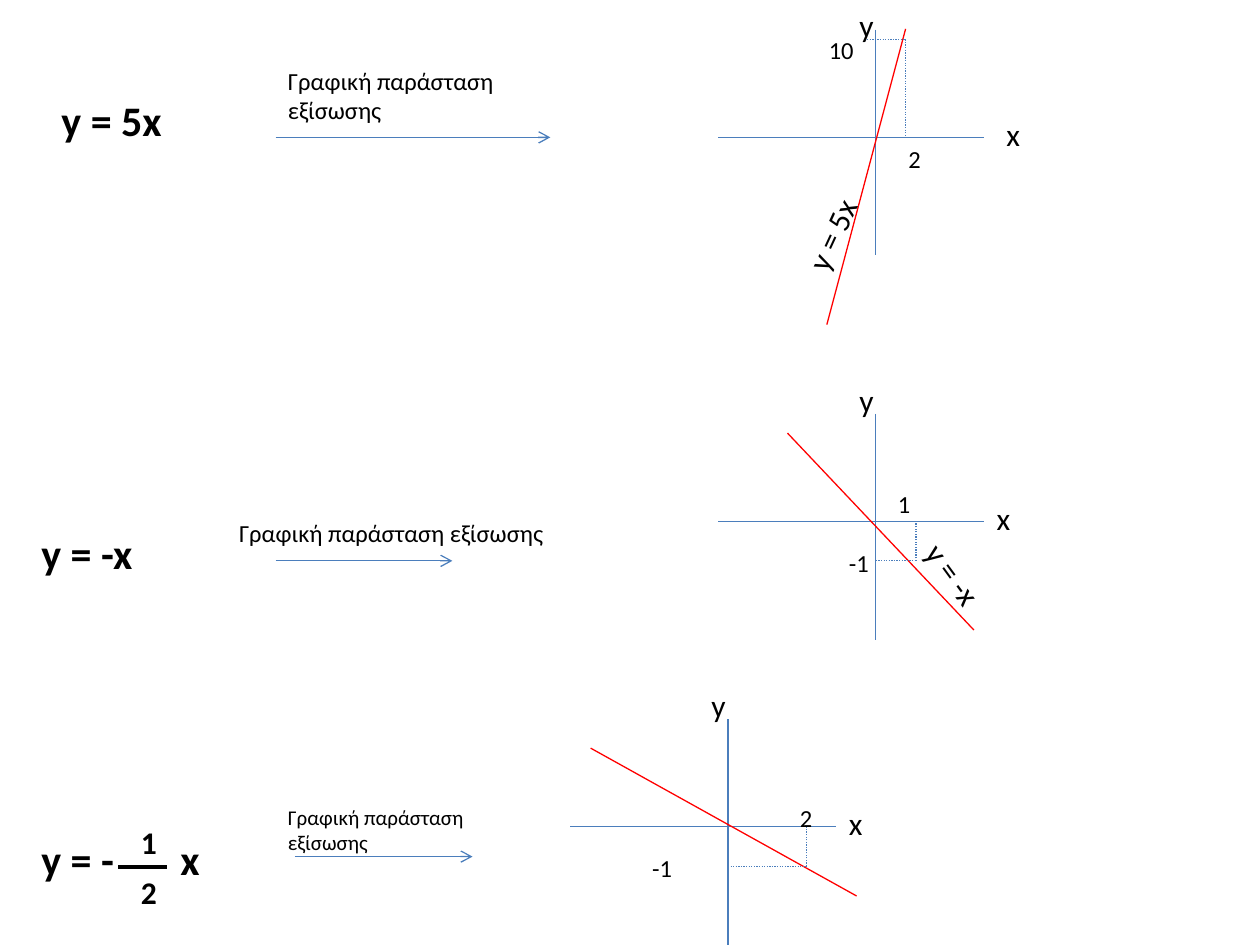
from dataclasses import dataclass

from lxml import etree
from pptx import Presentation
from pptx.dml.color import RGBColor
from pptx.enum import dml, shapes, text
from pptx.oxml import ns
from pptx.util import Pt


@dataclass(frozen=True)
class Theme:
    """Colours, font and sizes of the slide."""
    font: str = "Calibri"
    ink: str = "000000"
    axis: str = "4B7EBC"
    graph: str = "FF0000"
    equation: int = 24
    label: int = 18
    value: int = 14
    small: int = 12
    thin: float = 0.75
    thick: float = 2


THEME = Theme()
CAPTION = "Γραφική παράσταση εξίσωσης"


def add_text(s, box, words, size, bold=False, wrap=True, angle=0, tab=None):
    """Add a text box, with an optional tab stop."""
    sp = s.shapes.add_textbox(*map(Pt, box))
    sp.rotation = angle
    tf = sp.text_frame
    tf.word_wrap = wrap
    tf.auto_size = text.MSO_AUTO_SIZE.SHAPE_TO_FIT_TEXT
    p = tf.paragraphs[0]
    p.text = words
    if tab:
        tabs = etree.SubElement(p._p.get_or_add_pPr(), ns.qn("a:tabLst"))
        etree.SubElement(tabs, ns.qn("a:tab"), pos=str(Pt(tab)), algn="l")
    p.font.name = THEME.font
    p.font.size = Pt(size)
    p.font.bold = bold
    p.font.color.rgb = RGBColor.from_string(THEME.ink)


def add_line(s, start, end, color=THEME.axis, width=THEME.thin, dotted=False, arrow=False):
    """Add a straight line without a shadow."""
    sp = s.shapes.add_connector(shapes.MSO_CONNECTOR.STRAIGHT, *map(Pt, (*start, *end)))
    sp.line.color.rgb = RGBColor.from_string(color)
    sp.line.width = Pt(width)
    if dotted:
        sp.line.dash_style = dml.MSO_LINE.ROUND_DOT
    if arrow:
        etree.SubElement(sp.line._get_or_add_ln(), ns.qn("a:tailEnd"), type="arrow")
    etree.SubElement(sp._element.spPr, ns.qn("a:effectLst"))


def add_equation(s, box, words, fraction=None):
    """Add a bold equation, with an optional fraction as its factor."""
    x, y, w, h = box
    add_text(s, box, words, THEME.equation, bold=True, tab=79.5 if fraction else None)
    if fraction:
        add_line(s, (x + 51, y + 23), (x + 79, y + 23), THEME.ink, THEME.thick)
        for i, digit in enumerate(fraction):
            add_text(s, (x + 57, y - 6 + 29 * i, 22, 29), digit, THEME.label, bold=True)


def add_step(s, box, arrow, size=THEME.value, wrap=True):
    """Add the caption and the arrow (left, top, length) under it."""
    x, y, w, h = box
    dx, dy, length = arrow
    add_text(s, box, CAPTION, size, wrap=wrap)
    add_line(s, (x + dx, y + dy), (x + dx + length, y + dy), arrow=True)


def add_graph(s, box, line, point, values, x_label=62, y_label=-84, guide=0, name=None):
    """Add axes, line, guides and labels placed from the origin in the box."""
    x, y, w, h = box
    ox, oy = x + 90, y + 61.5

    def at(dx, dy):
        """Move a point from the origin to the slide."""
        return ox + dx, oy + dy

    add_line(s, (ox, y), (ox, y + h))
    add_line(s, (x, oy), (x + w, oy))
    add_line(s, at(*line[0]), at(*line[1]), THEME.graph)
    px, py = point
    add_line(s, at(guide, py), at(px, py), dotted=True)
    add_line(s, at(px, py), at(px, 0), dotted=True)
    for words, dx, dy in values:
        add_text(s, (*at(dx, dy), 34, 24.5), words, THEME.value)
    for words, dx, dy in (("x", x_label, -16.5), ("y", -16.5, y_label)):
        add_text(s, (*at(dx, dy), 28, 29), words, THEME.label)
    if name:
        words, dx, dy, angle = name
        add_text(s, (*at(dx, dy), 101.5, 29), words, THEME.label, angle=angle)


def main():
    """Build the slide with three equations and their graphs."""
    prs = Presentation()
    prs.slide_width, prs.slide_height = Pt(720), Pt(540)
    s = prs.slides.add_slide(prs.slide_layouts[6])

    add_equation(s, (28, 50.5, 146, 36), "y = 5x")
    add_step(s, (157.5, 34, 135.5, 41), (0, 44.5, 157))
    add_graph(s, (410.5, 17, 152, 129), ((-28, 107), (17, -62)), (17, -56),
              (("10", -34, -62), ("2", 11.5, 0)), x_label=67.5, y_label=-78.5,
              guide=-5, name=("y = 5x", -66.5, 20.5, 294.8))

    add_equation(s, (16.5, 298, 106.5, 36), "y = -x")
    add_step(s, (129.5, 292.5, 190, 24.5), (28, 28, 101), wrap=False)
    add_graph(s, (410.5, 236.5, 152, 129), ((56, 62), (-50.5, -50.5)), (23, 22.5),
              (("-1", -22.5, 11.5), ("1", 5.5, -22)), name=("y = -x", 8, 35.5, 53.9))

    add_equation(s, (16.5, 472.5, 106.5, 36), "y = -\tx", fraction="12")
    add_step(s, (157.5, 456, 124, 36), (11, 33.5, 101.5), THEME.small)
    add_graph(s, (326, 411, 152, 129), ((73.5, 39.5), (-78.5, -45)), (45, 22.5),
              (("-1", -50.5, 11.5), ("2", 34, -17)))

    prs.save("out.pptx")


if __name__ == "__main__":
    main()
